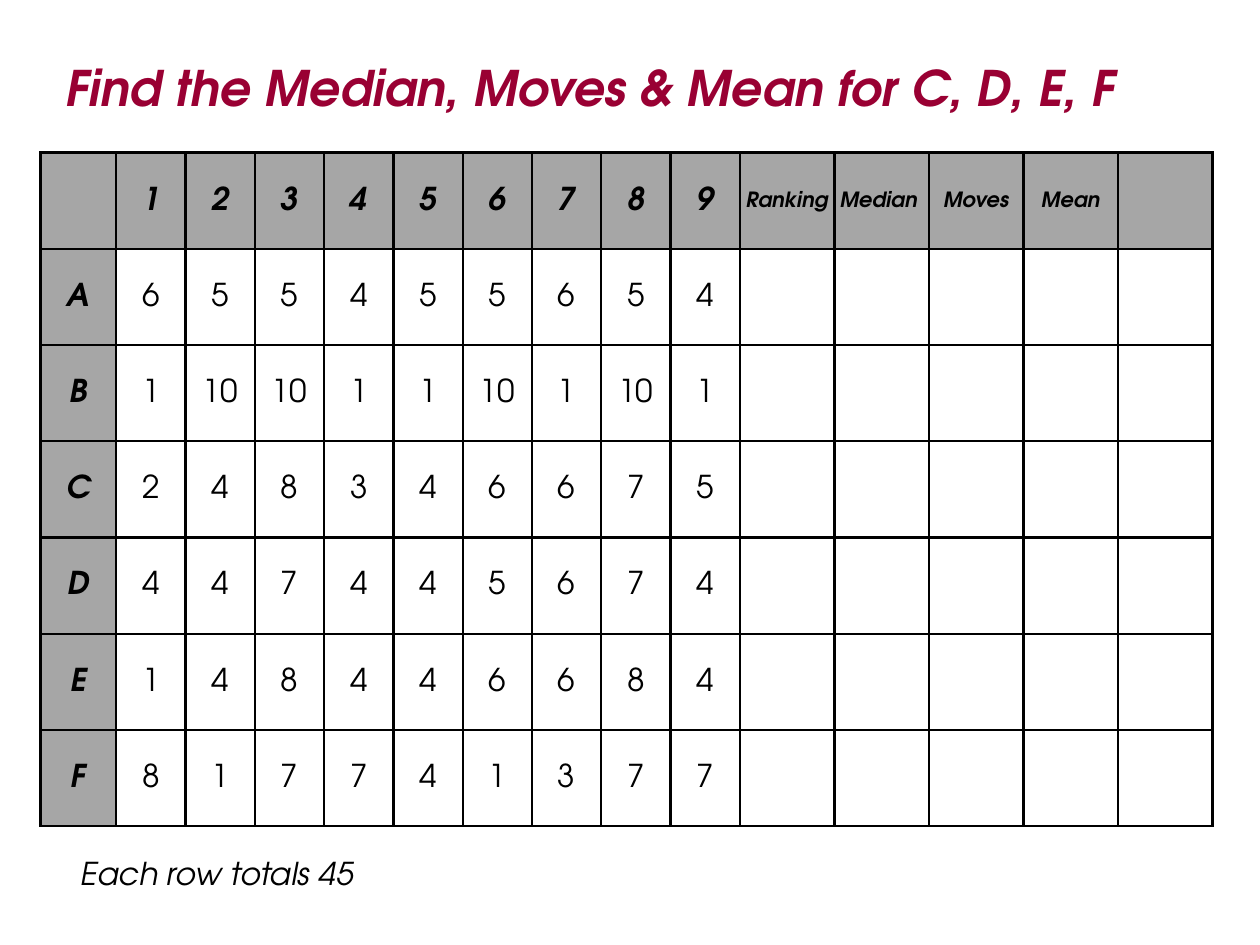
from pptx import Presentation
from pptx.dml.color import RGBColor
from pptx.enum.text import MSO_ANCHOR, PP_ALIGN
from pptx.oxml import parse_xml
from pptx.oxml.ns import nsdecls
from pptx.util import Pt

COLORS = {"heading": "990033", "ink": "000000", "label": "A6A6A6"}
FONT = "TeX Gyre Adventor"
HEADER = ["", *"123456789", "Ranking", "Median ", "Moves", "Mean", ""]
SCORES = {
    "A": [6, 5, 5, 4, 5, 5, 6, 5, 4],
    "B": [1, 10, 10, 1, 1, 10, 1, 10, 1],
    "C": [2, 4, 8, 3, 4, 6, 6, 7, 5],
    "D": [4, 4, 7, 4, 4, 5, 6, 7, 4],
    "E": [1, 4, 8, 4, 4, 6, 6, 8, 4],
    "F": [8, 1, 7, 7, 4, 1, 3, 7, 7],
}
SUMMARY_COLUMNS = 5
COLUMN_WIDTHS = [43.2] + [39.6] * 9 + [54] * SUMMARY_COLUMNS
ROW_HEIGHT = 55


def write(frame, text, size=18, color="ink", bold=False, italic=False,
          align=PP_ALIGN.LEFT):
    paragraph = frame.paragraphs[0]
    paragraph.alignment = align
    run = paragraph.add_run()
    run.text = text
    font = run.font
    font.name, font.size = FONT, Pt(size)
    font.bold, font.italic = bold, italic
    font.color.rgb = RGBColor.from_string(COLORS[color])


class ScoreSlide:
    def __init__(self, deck):
        self.slide = deck.slides.add_slide(deck.slide_layouts[5])

    def title(self, text, left, top, width, height):
        heading = self.slide.shapes.title
        heading.left, heading.top = Pt(left), Pt(top)
        heading.width, heading.height = Pt(width), Pt(height)
        heading.text_frame.vertical_anchor = MSO_ANCHOR.TOP
        write(heading.text_frame, text, size=28, color="heading",
              bold=True, italic=True)

    def note(self, text, left, top, width, height):
        remark = self.slide.shapes.add_textbox(
            Pt(left), Pt(top), Pt(width), Pt(height))
        remark.text_frame.word_wrap = True
        write(remark.text_frame, text, italic=True)

    def grid(self, rows, left, top):
        table = self.slide.shapes.add_table(
            len(rows), len(COLUMN_WIDTHS), Pt(left), Pt(top),
            Pt(sum(COLUMN_WIDTHS)), Pt(ROW_HEIGHT * len(rows))).table
        table.first_row = table.horz_banding = False
        for column, width in zip(table.columns, COLUMN_WIDTHS):
            column.width = Pt(width)
        for row_index, row in enumerate(rows):
            table.rows[row_index].height = Pt(ROW_HEIGHT)
            for column_index, value in enumerate(row):
                self.cell(table.cell(row_index, column_index), value,
                          is_label=row_index == 0 or column_index == 0)

    def cell(self, cell, value, is_label):
        cell.margin_left = cell.margin_right = cell.margin_top = Pt(0.72)
        cell.margin_bottom = Pt(0)
        cell.vertical_anchor = MSO_ANCHOR.MIDDLE
        self.borders(cell)
        if is_label:
            cell.fill.solid()
            cell.fill.fore_color.rgb = RGBColor.from_string(COLORS["label"])
        else:
            cell.fill.background()
        text = str(value)
        if text:
            write(cell.text_frame, text, size=12 if len(text) > 2 else 18,
                  bold=is_label, italic=is_label, align=PP_ALIGN.CENTER)

    def borders(self, cell):
        properties = cell._tc.get_or_add_tcPr()
        for side in ("lnL", "lnR", "lnT", "lnB"):
            properties.append(parse_xml(
                f'<a:{side} {nsdecls("a")} w="{Pt(1.5)}"><a:solidFill>'
                f'<a:srgbClr val="{COLORS["ink"]}"/></a:solidFill></a:{side}>'))


def main():
    deck = Presentation()
    deck.slide_width, deck.slide_height = Pt(720), Pt(540)
    page = ScoreSlide(deck)
    page.title("Find the Median, Moves & Mean for C, D, E, F", 30, 29, 693, 41)
    rows = [HEADER] + [[name, *scores, *[""] * SUMMARY_COLUMNS]
                       for name, scores in SCORES.items()]
    page.grid(rows, 23.2, 87.2)
    page.note("Each row totals 45", 39, 484.5, 202, 29)
    deck.save("out.pptx")


if __name__ == "__main__":
    main()
